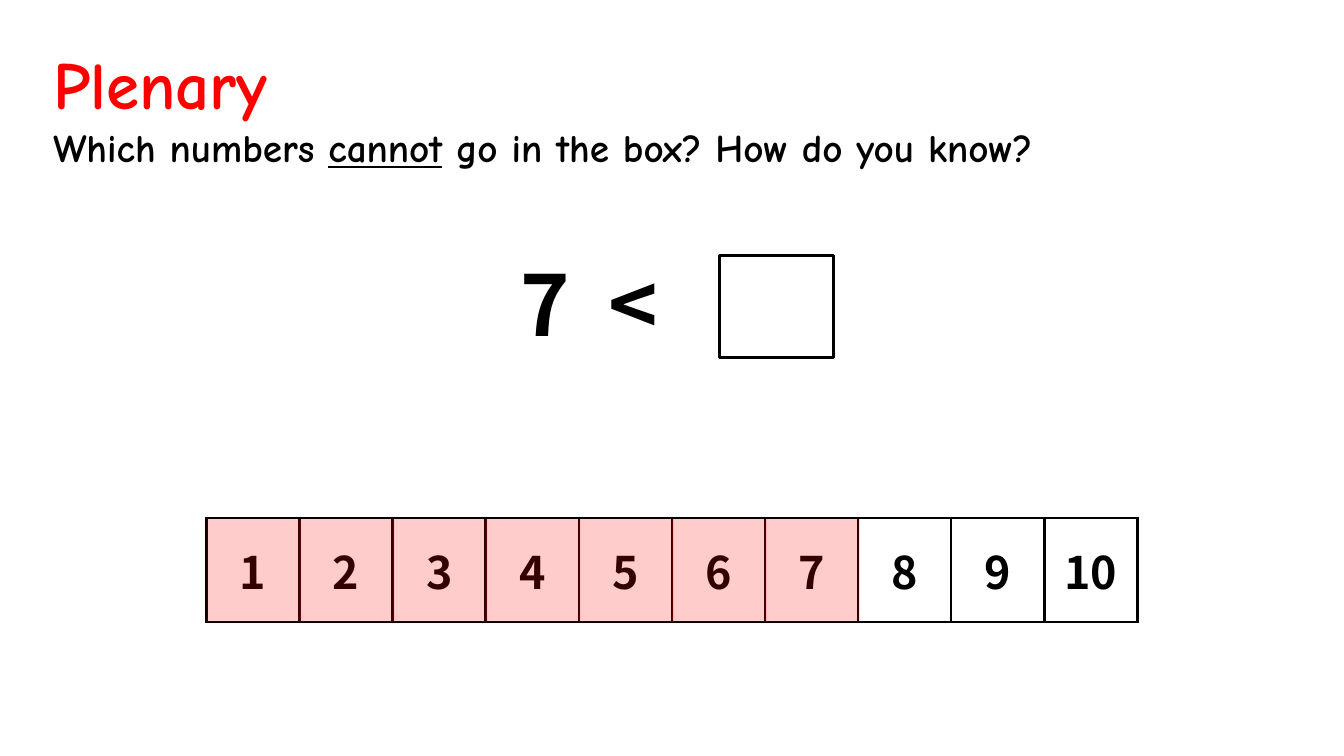
"""Build the plenary slide: a comparison with an empty box above a number track."""
from lxml.etree import SubElement
from pptx import Presentation
from pptx.dml.color import RGBColor
from pptx.enum.shapes import MSO_SHAPE
from pptx.enum.text import MSO_ANCHOR, PP_ALIGN
from pptx.oxml.ns import qn
from pptx.util import Pt

TITLE = "Plenary"
QUESTION = [("Which numbers ", False), ("cannot", True),
            (" go in the box? How do you know?", False)]
COMPARISON = ["7", " ", "<"]
NUMBERS = range(1, 11)
EXCLUDED_COUNT = 7

RED = RGBColor(0xFF, 0x00, 0x00)
BLACK = RGBColor(0x00, 0x00, 0x00)
WHITE = RGBColor(0xFF, 0xFF, 0xFF)
HEADING_FONT = "Comic Neue"
NUMBER_FONT = "Noto Sans CJK JP"

TRACK_LEFT, TRACK_TOP = 147.6, 370.1
CELL_WIDTH, CELL_HEIGHT = 66.48, 74.2
OVERLAY_WIDTH, OVERLAY_HEIGHT = 67.6, 73.4
BORDER_WIDTH = 2.25
GAP_SPACING = 13.5


def style_paragraph(paragraph, name, size, color):
    paragraph.font.name = name
    paragraph.font.size = Pt(size)
    paragraph.font.bold = True
    paragraph.font.color.rgb = color


def add_text_frame(slide, left, top, width, height):
    text_box = slide.shapes.add_textbox(Pt(left), Pt(top), Pt(width), Pt(height))
    text_box.text_frame.word_wrap = True
    return text_box.text_frame


def add_rectangle(slide, left, top, width, height, color):
    shape = slide.shapes.add_shape(
        MSO_SHAPE.RECTANGLE, Pt(left), Pt(top), Pt(width), Pt(height))
    shape.shadow.inherit = False
    shape.fill.solid()
    shape.fill.fore_color.rgb = color
    return shape


def add_heading(slide):
    frame = add_text_frame(slide, 31, 26.6, 808.6, 99.4)
    title = frame.paragraphs[0]
    title.text = TITLE
    style_paragraph(title, HEADING_FONT, 48, RED)
    question = frame.add_paragraph()
    style_paragraph(question, HEADING_FONT, 28, BLACK)
    for text, underlined in QUESTION:
        run = question.add_run()
        run.text = text
        if underlined:
            run.font.underline = True


def add_comparison(slide):
    paragraph = add_text_frame(slide, 365, 177.1, 150.5, 79.9).paragraphs[0]
    style_paragraph(paragraph, NUMBER_FONT, 60, BLACK)
    for text in COMPARISON:
        run = paragraph.add_run()
        run.text = text
        if text == " ":
            run.font._element.set("spc", str(int(GAP_SPACING * 100)))
    box = add_rectangle(slide, 514.1, 182.2, 81.4, 73.4, WHITE)
    box.line.color.rgb = BLACK
    box.line.width = Pt(BORDER_WIDTH)


def add_borders(cell):
    properties = cell._tc.get_or_add_tcPr()
    for index, side in enumerate(("a:lnL", "a:lnR", "a:lnT", "a:lnB")):
        line = properties.makeelement(qn(side), {"w": str(Pt(BORDER_WIDTH))})
        fill = SubElement(line, qn("a:solidFill"))
        SubElement(fill, qn("a:srgbClr"), val=str(BLACK))
        properties.insert(index, line)


def add_number_track(slide):
    count = len(NUMBERS)
    table = slide.shapes.add_table(
        1, count, Pt(TRACK_LEFT), Pt(TRACK_TOP),
        Pt(CELL_WIDTH * count), Pt(CELL_HEIGHT)).table
    table.first_row = False
    table.horz_banding = False
    for column, number in enumerate(NUMBERS):
        table.columns[column].width = Pt(CELL_WIDTH)
        cell = table.cell(0, column)
        cell.text = str(number)
        cell.vertical_anchor = MSO_ANCHOR.MIDDLE
        cell.fill.solid()
        cell.fill.fore_color.rgb = WHITE
        paragraph = cell.text_frame.paragraphs[0]
        paragraph.alignment = PP_ALIGN.CENTER
        style_paragraph(paragraph, NUMBER_FONT, 32, BLACK)
        add_borders(cell)


def add_overlays(slide):
    for column in range(EXCLUDED_COUNT):
        overlay = add_rectangle(slide, TRACK_LEFT + column * CELL_WIDTH,
                                TRACK_TOP + 0.7, OVERLAY_WIDTH, OVERLAY_HEIGHT, RED)
        overlay.line.fill.background()
        color = overlay.fill._xPr.find(qn("a:solidFill"))[0]
        SubElement(color, qn("a:alpha"), val="20000")


def main():
    presentation = Presentation()
    presentation.slide_width = Pt(960)
    presentation.slide_height = Pt(540)
    slide = presentation.slides.add_slide(presentation.slide_layouts[6])
    add_heading(slide)
    add_number_track(slide)
    add_overlays(slide)
    add_comparison(slide)
    presentation.save("out.pptx")


if __name__ == "__main__":
    main()
